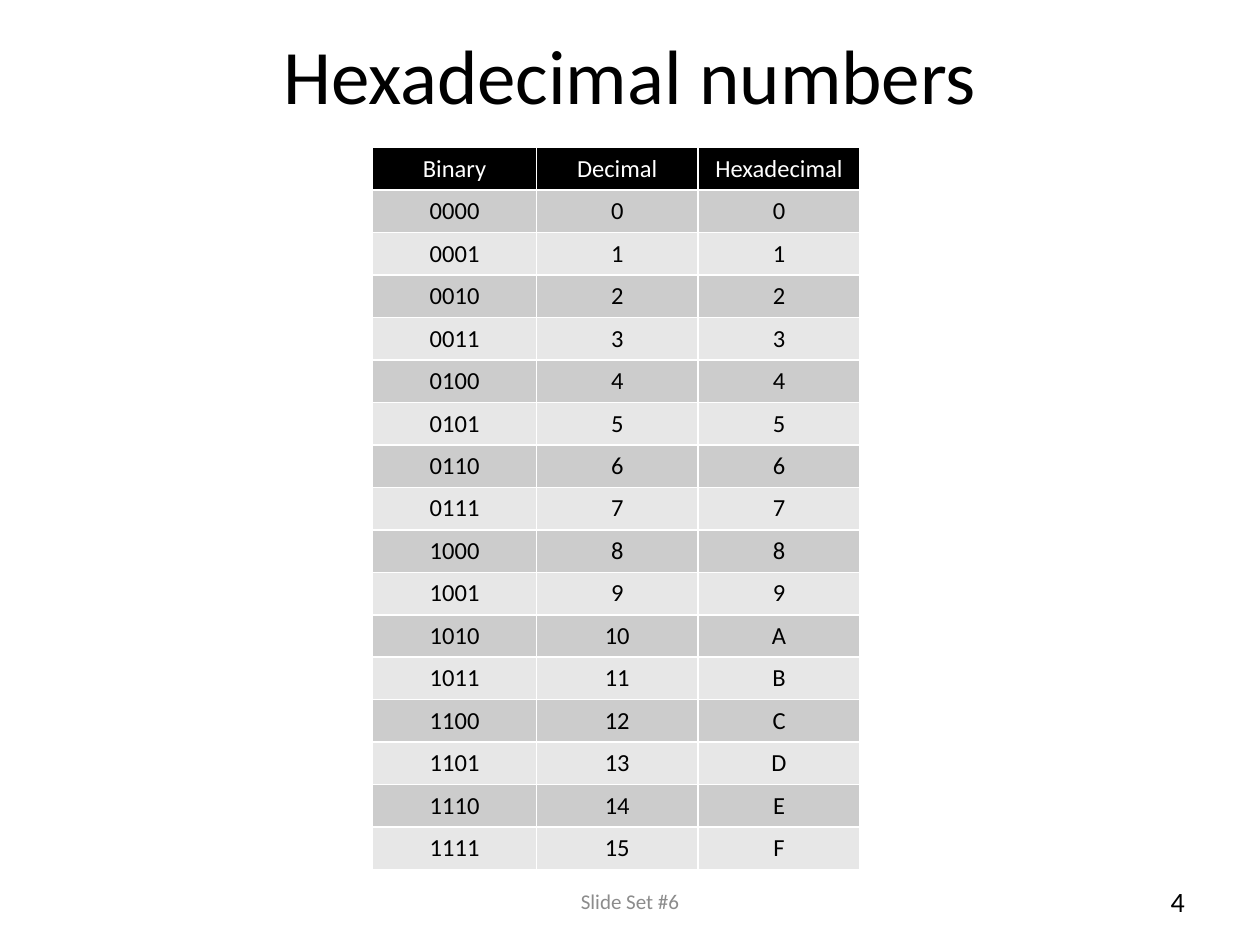
from dataclasses import dataclass

from pptx import Presentation
from pptx.dml.color import RGBColor as RGB
from pptx.enum.text import MSO_ANCHOR as Anchor, PP_ALIGN as Align
from pptx.util import Pt


@dataclass(frozen=True)
class Theme:
    font: str = "Calibri"
    title_size: float = 44
    cell_size: float = 14
    number_size: float = 16
    footer_size: float = 12
    black: RGB = RGB(0x00, 0x00, 0x00)
    white: RGB = RGB(0xFF, 0xFF, 0xFF)
    gray: RGB = RGB(0x8C, 0x8C, 0x8C)
    bands: tuple[RGB, RGB] = (RGB(0xCC, 0xCC, 0xCC), RGB(0xE7, 0xE7, 0xE7))


@dataclass(frozen=True)
class Box:
    left: float
    top: float
    width: float
    height: float

    def lengths(self) -> tuple[Pt, Pt, Pt, Pt]:
        return Pt(self.left), Pt(self.top), Pt(self.width), Pt(self.height)


@dataclass(frozen=True)
class Label:
    text: str
    box: Box
    size: float
    color: RGB
    align: Align


THEME = Theme()
TITLE_BOX = Box(49.5, 0, 621, 84)
TABLE_BOX = Box(213, 84.4, 278.6, 410.4)
COLUMN_WIDTHS = (93.6, 92.2, 92.8)
HEADERS = ("Binary", "Decimal", "Hexadecimal")
LABELS = (
    Label("4", Box(516, 500.5, 168, 28.75), THEME.number_size, THEME.black, Align.RIGHT),
    Label("Slide Set #6", Box(246, 500.5, 228, 28.75), THEME.footer_size, THEME.gray,
          Align.CENTER),
)


def set_text(tf, text: str, size: float, color: RGB, align: Align) -> None:
    tf.text = text
    p = tf.paragraphs[0]
    p.alignment = align
    p.font.name = THEME.font
    p.font.size = Pt(size)
    p.font.bold = False
    p.font.color.rgb = color


def add_title(slide, text: str) -> None:
    sp = slide.shapes.title
    sp.left, sp.top, sp.width, sp.height = TITLE_BOX.lengths()
    sp.text_frame.vertical_anchor = Anchor.MIDDLE
    set_text(sp.text_frame, text, THEME.title_size, THEME.black, Align.CENTER)


def add_label(slide, label: Label) -> None:
    tf = slide.shapes.add_textbox(*label.box.lengths()).text_frame
    tf.word_wrap = True
    tf.vertical_anchor = Anchor.MIDDLE
    set_text(tf, label.text, label.size, label.color, label.align)


def add_number_table(slide) -> None:
    rows = [HEADERS] + [(f"{n:04b}", str(n), f"{n:X}") for n in range(16)]
    # The default table style supplies the white cell borders
    table = slide.shapes.add_table(len(rows), len(HEADERS), *TABLE_BOX.lengths()).table
    for column, width in zip(table.columns, COLUMN_WIDTHS):
        column.width = Pt(width)
    for i, values in enumerate(rows):
        table.rows[i].height = Pt(TABLE_BOX.height / len(rows))
        fill = THEME.bands[(i - 1) % 2] if i else THEME.black
        color = THEME.black if i else THEME.white
        for j, value in enumerate(values):
            cell = table.cell(i, j)
            cell.fill.solid()
            cell.fill.fore_color.rgb = fill
            set_text(cell.text_frame, value, THEME.cell_size, color, Align.CENTER)


def main() -> None:
    prs = Presentation()
    prs.slide_width, prs.slide_height = Pt(720), Pt(540)
    slide = prs.slides.add_slide(prs.slide_layouts[5])

    # Title and conversion table
    add_title(slide, "Hexadecimal numbers")
    add_number_table(slide)

    # Slide number and footer
    for label in LABELS:
        add_label(slide, label)

    prs.save("out.pptx")


if __name__ == "__main__":
    main()
